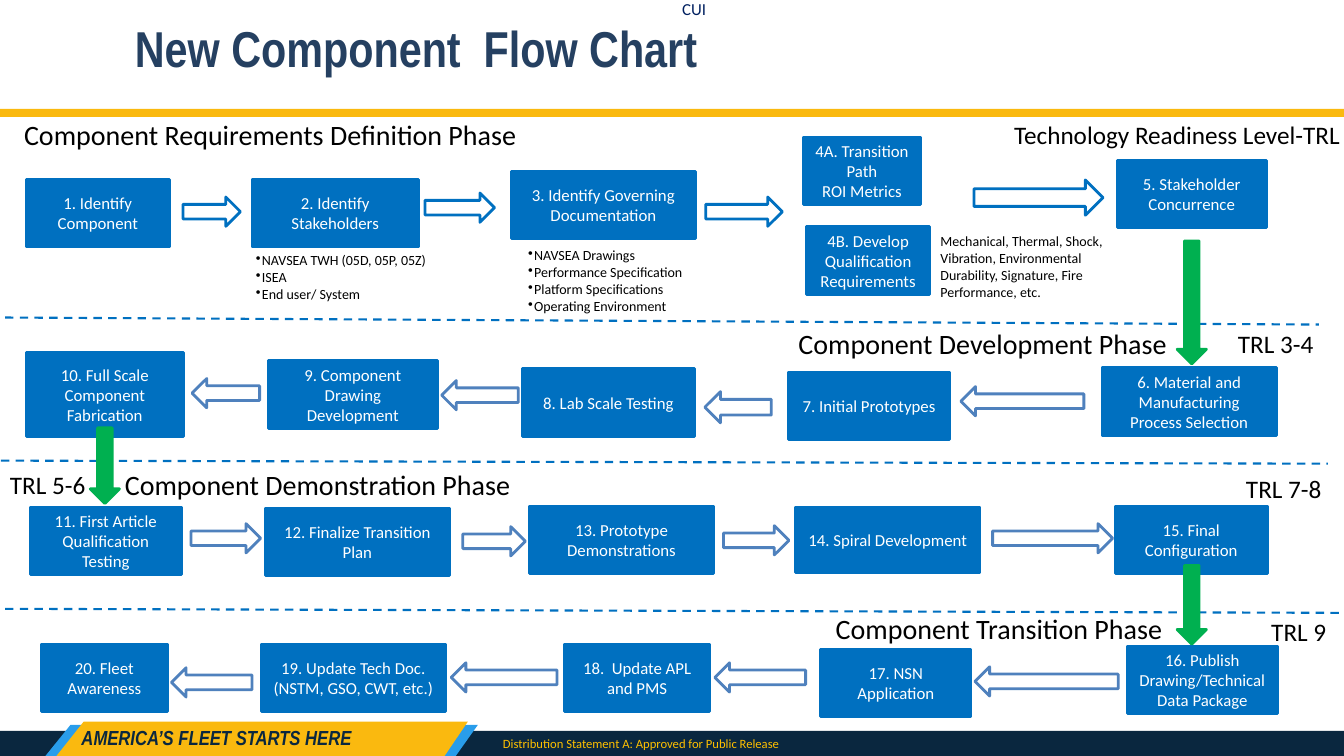
from dataclasses import dataclass

from lxml.etree import SubElement
from pptx import Presentation
from pptx.dml.color import RGBColor
from pptx.enum.dml import MSO_LINE
from pptx.enum.shapes import MSO_CONNECTOR, MSO_SHAPE
from pptx.enum.text import MSO_ANCHOR as Anchor, PP_ALIGN as Align
from pptx.oxml.ns import qn
from pptx.util import Cm, Pt


@dataclass(frozen=True)
class Theme:
    """Colours, fonts and type sizes of the flow chart."""
    body: str = "Calibri"
    display: str = "Arial Narrow"
    blue: str = "0070C0"
    steel: str = "4F81BD"
    green: str = "00B050"
    gold: str = "FAB90F"
    sky: str = "299DEB"
    navy: str = "0A273F"
    title: str = "254061"
    marking: str = "002060"
    statement: str = "FFC000"
    white: str = "FFFFFF"
    black: str = "000000"
    title_size: float = 36
    phase_size: float = 20
    level_size: float = 18
    motto_size: float = 14.5
    step_size: float = 12
    note_size: float = 10
    statement_size: float = 9


def cm(inches):
    """Turn inches into a Cm length."""
    return Cm(inches * 2.54)


def write(frame, text, *, size, color, font, bold=None, italic=None,
          align=Align.LEFT, bullet=False, spacing=None):
    """Fill a text frame, one paragraph for each line of text."""
    for index, line in enumerate(text.split("\n")):
        para = frame.add_paragraph() if index else frame.paragraphs[0]
        para.alignment = align
        if spacing:
            para.line_spacing = spacing
        if bullet:
            props = para._p.get_or_add_pPr()
            props.set("marL", str(cm(0.06)))
            props.set("indent", str(cm(-0.06)))
            SubElement(props, qn("a:buChar")).set("char", "•")
        span = para.add_run()
        span.text = line
        span.font.name, span.font.size = font, Pt(size)
        span.font.bold, span.font.italic = bold, italic
        span.font.color.rgb = RGBColor.from_string(color)


class FlowPage:
    """Draws the elements of one page in one theme."""

    def __init__(self, page, theme):
        """Keep the page and its theme."""
        self.shapes, self.theme = page.shapes, theme

    def paint(self, shape, fill, line=None):
        """Set fill and outline and remove the shadow."""
        shape.shadow.inherit = False
        if fill:
            shape.fill.solid()
            shape.fill.fore_color.rgb = RGBColor.from_string(fill)
        else:
            shape.fill.background()
        if line:
            shape.line.color.rgb = RGBColor.from_string(line)
            shape.line.width = Pt(2)
        else:
            shape.line.fill.background()

    def bar(self, left, top, width, height, fill):
        """Draw a plain band."""
        band = self.shapes.add_shape(MSO_SHAPE.RECTANGLE, cm(left), cm(top), cm(width), cm(height))
        self.paint(band, fill)

    def ribbon(self, points, fill):
        """Draw a closed outline through the points."""
        start, *others = [(cm(x), cm(y)) for x, y in points]
        builder = self.shapes.build_freeform(*start, scale=1.0)
        builder.add_line_segments(others, close=True)
        self.paint(builder.convert_to_shape(), fill)

    def text(self, left, top, width, height, text, wrap=False, anchor=Anchor.TOP, **style):
        """Place a text box."""
        box = self.shapes.add_textbox(cm(left), cm(top), cm(width), cm(height))
        box.text_frame.word_wrap = wrap
        box.text_frame.vertical_anchor = anchor
        write(box.text_frame, text, **{"font": self.theme.body, "color": self.theme.black, **style})

    def step(self, left, top, width, text, height=0.67):
        """Draw a process box with its label."""
        box = self.shapes.add_shape(MSO_SHAPE.FLOWCHART_PROCESS, cm(left), cm(top), cm(width), cm(height))
        self.paint(box, self.theme.blue, self.theme.blue)
        box.text_frame.word_wrap = True
        box.text_frame.vertical_anchor = Anchor.MIDDLE
        write(box.text_frame, text, size=self.theme.step_size, font=self.theme.body,
              color=self.theme.white, align=Align.CENTER)

    def arrow(self, x, y, length, turn, line, fill, breadth=0.29):
        """Draw a block arrow around its centre point."""
        arrow = self.shapes.add_shape(MSO_SHAPE.DOWN_ARROW, cm(x - breadth / 2), cm(y - length / 2),
                                      cm(breadth), cm(length))
        arrow.rotation = turn
        self.paint(arrow, fill, line)

    def divider(self, left, top, right, bottom):
        """Draw a dashed line between two phases."""
        line = self.shapes.add_connector(MSO_CONNECTOR.STRAIGHT, cm(left), cm(top), cm(right), cm(bottom))
        line.line.color.rgb = RGBColor.from_string(self.theme.blue)
        line.line.width = Pt(1.5)
        line.line.dash_style = MSO_LINE.DASH
        SubElement(line._element.spPr, qn("a:effectLst"))


STEPS = [
    (0.26, 1.78, 1.42, "1. Identify Component"),
    (2.5, 1.78, 1.65, "2. Identify Stakeholders"),
    (5.07, 1.7, 1.83, "3. Identify Governing Documentation"),
    (8, 2.25, 1.22, "4B. Develop Qualification Requirements"),
    (7.97, 1.36, 1.16, "4A. Transition Path\nROI Metrics"),
    (11.08, 1.59, 1.48, "5. Stakeholder Concurrence"),
    (10.93, 3.65, 1.73, "6. Material and Manufacturing Process Selection"),
    (7.82, 3.69, 1.6, "7. Initial Prototypes"),
    (5.18, 3.66, 1.71, "8. Lab Scale Testing"),
    (2.66, 3.58, 1.68, "9. Component Drawing Development"),
    (0.26, 3.5, 1.56, "10. Full Scale Component Fabrication", 0.83),
    (0.3, 5.03, 1.5, "11. First Article Qualification Testing"),
    (2.63, 5.04, 1.83, "12. Finalize Transition Plan"),
    (5.25, 5.02, 1.83, "13. Prototype Demonstrations"),
    (7.89, 5.03, 1.83, "14. Spiral Development", 0.65),
    (11.06, 5.02, 1.51, "15. Final Configuration"),
    (11.18, 6.41, 1.49, "16. Publish Drawing/Technical Data Package"),
    (8.14, 6.44, 1.49, "17. NSN Application"),
    (5.6, 6.39, 1.44, "18.  Update APL and PMS"),
    (2.59, 6.39, 1.83, "19. Update Tech Doc. (NSTM, GSO, CWT, etc.)"),
    (0.41, 6.39, 1.25, "20. Fleet Awareness"),
]
DEFINITION_ARROWS = [(2.1, 2.1, 0.57), (4.56, 2.06, 0.69), (7.38, 2.1, 0.76)]
DEVELOPMENT_ARROWS = [(10.14, 3.98, 1.22), (4.76, 3.92, 0.76), (2.24, 3.9, 0.67)]
DEMONSTRATION_ARROWS = [(2.24, 5.34, 0.69), (4.9, 5.37, 0.62), (7.5, 5.36, 0.65), (10.44, 5.34, 1.19)]
TRANSITION_ARROWS = [(10.38, 6.76, 1.42), (7.54, 6.72, 0.9), (5, 6.72, 1.05)]
PHASE_ARROWS = [(11.82, 3, 1.22), (11.82, 6, 0.78), (1.04, 4.62, 0.75)]
DIVIDERS = [(0.05, 3.15, 13.08, 3.22), (0.01, 4.57, 13.17, 4.6), (0.05, 6.04, 13.33, 6.08)]
PHASES = [
    (0.14, 1.12, 5.13, "Component Requirements Definition Phase"),
    (7.82, 3.19, 3.89, "Component Development Phase"),
    (1.14, 4.59, 4.06, "Component Demonstration Phase"),
    (8.19, 6.02, 3.47, "Component Transition Phase"),
]
LEVELS = [
    (12.18, 3.21, 0.96, "TRL 3-4"),
    (12.26, 4.65, 0.96, "TRL 7-8"),
    (0, 4.61, 0.96, "TRL 5-6"),
    (12.51, 6.07, 0.75, "TRL 9"),
    (9.96, 1.13, 3.53, "Technology Readiness Level-TRL"),
]
STAKEHOLDERS = "NAVSEA TWH (05D, 05P, 05Z)\nISEA\nEnd user/ System"
DOCUMENTS = "NAVSEA Drawings\nPerformance Specification\nPlatform Specifications\nOperating Environment"
REQUIREMENTS = "Mechanical, Thermal, Shock, Vibration, Environmental Durability, Signature, Fire Performance, etc."


def main():
    """Build the flow chart and save it."""
    deck = Presentation()
    deck.slide_width, deck.slide_height = cm(13.33), cm(7.5)
    theme = Theme()
    page = FlowPage(deck.slides.add_slide(deck.slide_layouts[6]), theme)

    page.bar(-0.01, 1.08, 13.34, 0.08, theme.gold)
    page.bar(0, 7.25, 13.33, 0.25, theme.navy)
    page.ribbon([(0.7, 7.19), (4.74, 7.19), (4.52, 7.5), (0.45, 7.5)], theme.sky)
    page.ribbon([(0.83, 7.16), (4.64, 7.16), (4.41, 7.5), (0.56, 7.5)], theme.gold)
    page.text(0.71, 7.17, 3.89, 0.32, "AMERICA’S FLEET STARTS HERE", wrap=True, size=theme.motto_size,
              font=theme.display, color=theme.navy, bold=True, italic=True, spacing=0.9)
    page.text(6.47, -0.06, 0.83, 0.3, "CUI", wrap=True, anchor=Anchor.BOTTOM, size=theme.step_size,
              color=theme.marking, align=Align.CENTER)
    page.text(1.24, 0.12, 11.43, 0.7, "New Component  Flow Chart", wrap=True, size=theme.title_size,
              font=theme.display, color=theme.title, bold=True)
    page.text(4.89, 7.25, 8, 0.26, "Distribution Statement A: Approved for Public Release", wrap=True,
              size=theme.statement_size, color=theme.statement)

    for step in STEPS:
        page.step(*step)
    for arrows, turn, line in [(DEFINITION_ARROWS, 270, theme.blue), (DEVELOPMENT_ARROWS, 90, theme.steel),
                               (DEMONSTRATION_ARROWS, 270, theme.steel), (TRANSITION_ARROWS, 90, theme.steel)]:
        for arrow in arrows:
            page.arrow(*arrow, turn, line, theme.white)
    page.arrow(10.3, 1.96, 1.28, 270, theme.blue, theme.white, breadth=0.35)
    page.arrow(7.32, 4.04, 0.66, 90, theme.steel, theme.white, breadth=0.31)
    page.arrow(2.1, 6.77, 0.8, 90, theme.steel, None)
    for divider in DIVIDERS:
        page.divider(*divider)
    for left, top, width, phase in PHASES:
        page.text(left, top, width, 0.44, phase, size=theme.phase_size)
    page.text(2.44, 2.45, 1.95, 0.61, STAKEHOLDERS, size=theme.note_size, bullet=True)
    page.text(5.14, 2.4, 1.76, 0.77, DOCUMENTS, size=theme.note_size, bullet=True)
    page.text(9.23, 2.26, 1.83, 0.77, REQUIREMENTS, wrap=True, size=theme.note_size)
    for arrow in PHASE_ARROWS:
        page.arrow(*arrow, 0, theme.green, theme.green)
    for left, top, width, level in LEVELS:
        page.text(left, top, width, 0.4, level, size=theme.level_size)
    deck.save("out.pptx")


if __name__ == "__main__":
    main()
